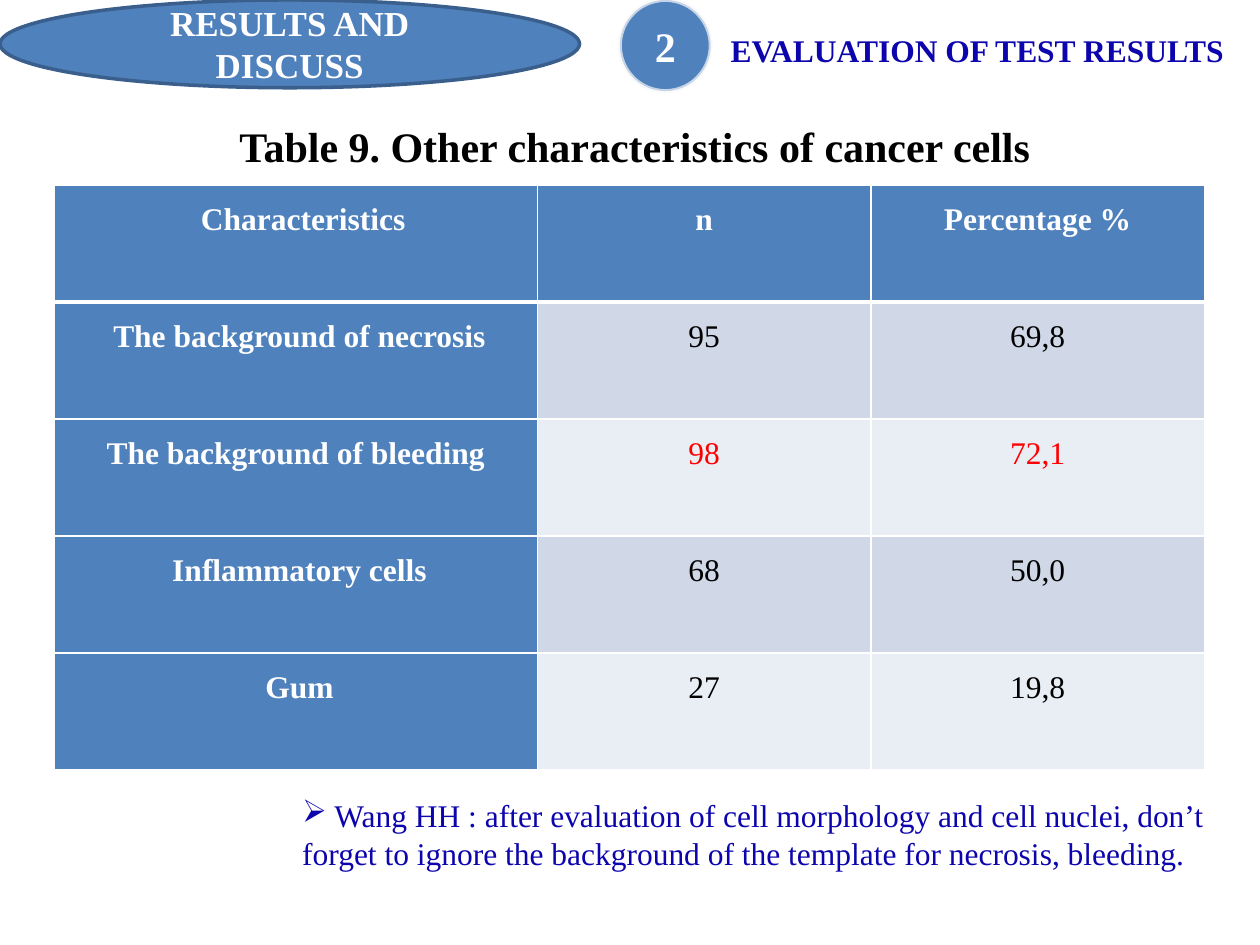
from collections import namedtuple

from lxml import etree
from pptx import Presentation
from pptx import util as u
from pptx.dml.color import RGBColor
from pptx.enum import shapes, text
from pptx.oxml import ns

FONT = "Times New Roman"
WHITE = RGBColor(0xFF, 0xFF, 0xFF)
BLACK = RGBColor(0x00, 0x00, 0x00)
RED = RGBColor(0xFF, 0x00, 0x00)
INDIGO = RGBColor(0x0C, 0x04, 0xAC)
BLUE = RGBColor(0x4F, 0x81, 0xBD)
BLUE_EDGE = RGBColor(0x3A, 0x5F, 0x8C)
PALE_EDGE = RGBColor(0xF8, 0xF8, 0xF8)
BAND_DARK = RGBColor(0xD0, 0xD8, 0xE8)
BAND_LIGHT = RGBColor(0xE9, 0xED, 0xF4)

WIDTH, HEIGHT = u.Inches(10), u.Inches(7.5)
COLUMNS, ROWS = 100, 75
SPACE = 0.06
HEADINGS = ("Characteristics", "n", "Percentage %")
FINDINGS = (
    ("The background of necrosis", "95", "69,8"),
    ("The background of bleeding", "98", "72,1"),
    ("Inflammatory cells", "68", "50,0"),
    ("Gum", "27", "19,8"),
)
LABEL_SPACES = (2, 1, 0, 1, 1)
HIGHLIGHT_ROW = 2
COLUMN_SHARES = (0.42, 0.29, 0.29)

Box = namedtuple("Box", "left top width height")


def grid_box(column, row, columns, rows):
    """Return the box that covers the given grid columns and rows."""
    return Box(
        int(WIDTH * column / COLUMNS),
        int(HEIGHT * row / ROWS),
        int(WIDTH * columns / COLUMNS),
        int(HEIGHT * rows / ROWS),
    )


def share_box(box, left, top, width, height):
    """Return the part of a box given by shares of its size."""
    return Box(
        box.left + int(box.width * left),
        box.top + int(box.height * top),
        int(box.width * width),
        int(box.height * height),
    )


def add_text(para, words, size, color, bold=False):
    """Add one formatted run to a paragraph."""
    span = para.add_run()
    span.text = words
    span.font.name = FONT
    span.font.size = u.Pt(size)
    span.font.bold = bold
    span.font.color.rgb = color


def add_oval(page, box, lines, size, edge, edge_width):
    """Add a blue oval with centred bold lines of text."""
    oval = page.shapes.add_shape(shapes.MSO_SHAPE.OVAL, *box)
    oval.shadow.inherit = False
    oval.fill.solid()
    oval.fill.fore_color.rgb = BLUE
    oval.line.color.rgb = edge
    oval.line.width = u.Pt(edge_width)
    frame = oval.text_frame
    frame.vertical_anchor = text.MSO_ANCHOR.MIDDLE
    for index, words in enumerate(lines):
        para = frame.add_paragraph() if index else frame.paragraphs[0]
        para.alignment = text.PP_ALIGN.CENTER
        add_text(para, words, size, WHITE, bold=True)
    return oval


def add_banner(page, box):
    """Place the section oval, the step number and the step heading."""
    add_oval(page, share_box(box, 0, 0, 0.46, 0.82),
             ("RESULTS AND", "DISCUSS"), 20, BLUE_EDGE, 2)
    badge = add_oval(page, share_box(box, 0.492, 0, 0.072, 0.85),
                     ("2",), 24, PALE_EDGE, 2.25)
    badge.text_frame.word_wrap = False
    edge_color = badge.line._get_or_add_ln().find(".//" + ns.qn("a:srgbClr"))
    etree.SubElement(edge_color, ns.qn("a:alpha"), val="70000")
    heading = page.shapes.add_textbox(*share_box(box, 0.57, 0.09, 0.43, 0.91))
    frame = heading.text_frame
    frame.word_wrap = True
    frame.margin_top = u.Inches(0.17)
    frame.margin_bottom = 0
    add_text(frame.paragraphs[0], "EVALUATION OF TEST RESULTS", 18, INDIGO, bold=True)


def add_caption(page, box):
    """Turn the title placeholder into the table caption."""
    title = page.shapes.title
    title.left, title.top, title.width, title.height = box
    frame = title.text_frame
    frame.word_wrap = True
    frame.auto_size = text.MSO_AUTO_SIZE.NONE
    frame.vertical_anchor = text.MSO_ANCHOR.MIDDLE
    frame.margin_left = u.Inches(0.6)
    para = frame.paragraphs[0]
    para.alignment = text.PP_ALIGN.LEFT
    add_text(para, "Table 9. Other characteristics of cancer cells", 24, BLACK, bold=True)


def set_borders(cell, bottom):
    """Draw white borders round a cell, with the given bottom width."""
    properties = cell._tc.get_or_add_tcPr()
    widths = (("a:lnL", 1), ("a:lnR", 1), ("a:lnT", 1), ("a:lnB", bottom))
    for index, (side, width) in enumerate(widths):
        line = etree.Element(ns.qn(side), w=str(u.Pt(width)))
        fill = etree.SubElement(line, ns.qn("a:solidFill"))
        etree.SubElement(fill, ns.qn("a:srgbClr"), val=str(WHITE))
        properties.insert(index, line)


def fill_cell(cell, words, row, column):
    """Write and format one cell according to its row and column."""
    is_heading = row == 0 or column == 0
    band = BAND_DARK if row % 2 else BAND_LIGHT
    value_color = RED if row == HIGHLIGHT_ROW else BLACK
    shift = SPACE * LABEL_SPACES[row] if column == 0 else 0
    cell.fill.solid()
    cell.fill.fore_color.rgb = BLUE if is_heading else band
    cell.margin_left = u.Inches(0.07 + shift)
    cell.margin_right = u.Inches(0.07)
    cell.margin_top = cell.margin_bottom = 0
    para = cell.text_frame.paragraphs[0]
    para.alignment = text.PP_ALIGN.CENTER
    para.line_spacing = 1.5
    para.space_before = u.Pt(3)
    add_text(para, words, 18, WHITE if is_heading else value_color, is_heading)
    set_borders(cell, 1 if row else 3)


def add_findings(page, box):
    """Place the table of cell characteristics."""
    records = (HEADINGS,) + FINDINGS
    table = page.shapes.add_table(len(records), len(HEADINGS), *box).table
    table.first_col = True
    for column, share in zip(table.columns, COLUMN_SHARES):
        column.width = int(box.width * share)
    for row, record in enumerate(records):
        table.rows[row].height = box.height // len(records)
        for column, words in enumerate(record):
            fill_cell(table.cell(row, column), words, row, column)


def add_note(page, box):
    """Place the bulleted remark under the table."""
    frame = page.shapes.add_textbox(*box).text_frame
    frame.word_wrap = True
    para = frame.paragraphs[0]
    etree.SubElement(para._p.get_or_add_pPr(), ns.qn("a:buChar"), char="➢")
    add_text(para, " Wang HH : after evaluation of cell morphology and cell nuclei, "
             "don’t forget to ignore the background of the template for necrosis, "
             "bleeding.", 18, INDIGO)


def main():
    """Build the slide and save the deck."""
    deck = Presentation()
    deck.slide_width, deck.slide_height = WIDTH, HEIGHT
    page = deck.slides.add_slide(deck.slide_layouts[5])
    add_caption(page, grid_box(13, 9.2, 80.3, 4.7))
    add_banner(page, grid_box(0, 0, 100, 8.5))
    add_findings(page, grid_box(4.3, 14.7, 91.3, 46.4))
    add_note(page, grid_box(23, 62.7, 74.6, 10.1))
    deck.save("out.pptx")


if __name__ == "__main__":
    main()
